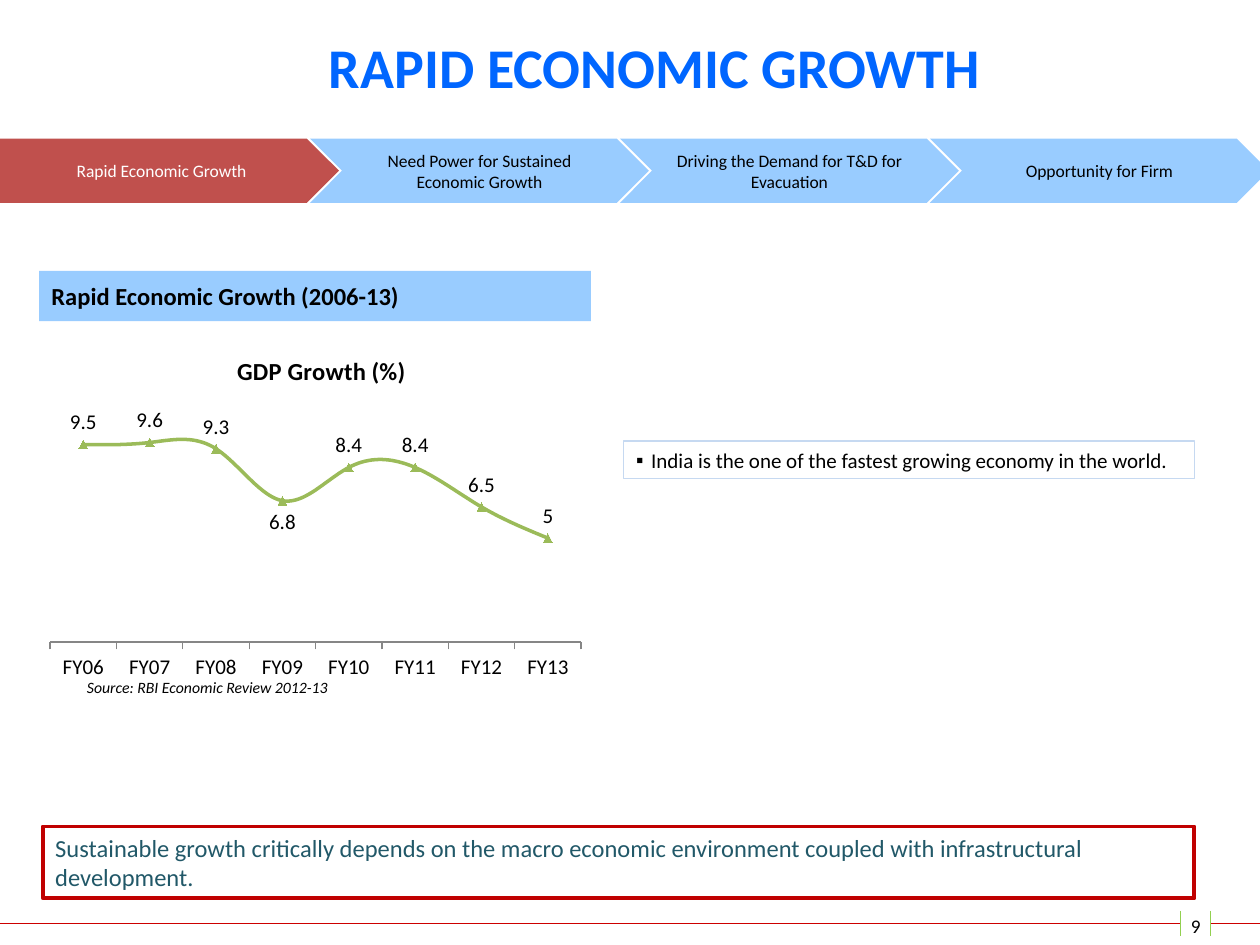
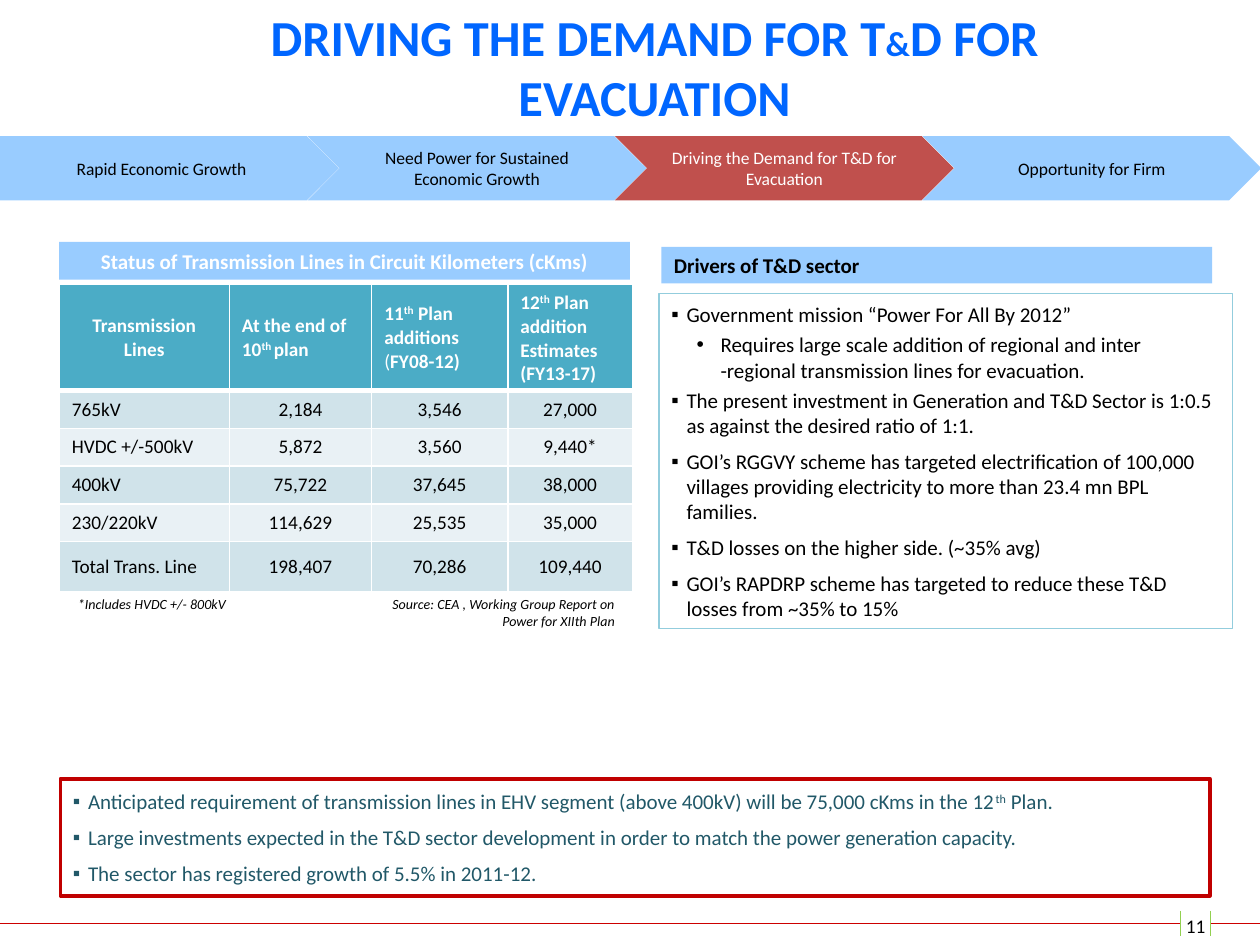
from lxml import etree
from pptx import Presentation
from pptx.chart.data import CategoryChartData
from pptx.dml.color import RGBColor
from pptx.enum.chart import (XL_CHART_TYPE, XL_LABEL_POSITION,
                             XL_MARKER_STYLE, XL_TICK_MARK)
from pptx.enum.shapes import MSO_CONNECTOR, MSO_SHAPE
from pptx.enum.text import MSO_ANCHOR, MSO_AUTO_SIZE, PP_ALIGN
from pptx.oxml.ns import qn
from pptx.util import Inches, Pt

RECT, PLATE, CHEVRON = MSO_SHAPE.RECTANGLE, MSO_SHAPE.PENTAGON, MSO_SHAPE.CHEVRON
LEFT, CENTER, RIGHT = PP_ALIGN.LEFT, PP_ALIGN.CENTER, PP_ALIGN.RIGHT
TOP, MIDDLE = MSO_ANCHOR.TOP, MSO_ANCHOR.MIDDLE
ABOVE, BELOW = XL_LABEL_POSITION.ABOVE, XL_LABEL_POSITION.BELOW

FONT = "Calibri"
BLACK = RGBColor(0, 0, 0)
WHITE = RGBColor(0xFF, 0xFF, 0xFF)
BLUE = RGBColor(0x00, 0x66, 0xFF)
SKY = RGBColor(0x99, 0xCC, 0xFF)
BRICK = RGBColor(0xC0, 0x50, 0x4D)
RED = RGBColor(0xC0, 0x00, 0x00)
RULE = RGBColor(0xCC, 0x00, 0x00)
LIME = RGBColor(0x92, 0xD0, 0x50)
TEAL = RGBColor(0x21, 0x58, 0x68)
PALE = RGBColor(0xC6, 0xD9, 0xF1)
AQUA = RGBColor(0x93, 0xCD, 0xDD)
HEAD = RGBColor(0x4B, 0xAC, 0xC6)
BANDS = (RGBColor(0xD0, 0xE3, 0xEA), RGBColor(0xE9, 0xF1, 0xF5))
GREEN = RGBColor(0x9B, 0xBB, 0x59)
GRAY = RGBColor(0x86, 0x86, 0x86)

SUP, SMALL, THIN = "sup", "small", "thin"
TH = ("th", SUP)

STEPS = ["Rapid Economic Growth",
         "Need Power for Sustained Economic Growth",
         "Driving the Demand for T&D for Evacuation",
         "Opportunity for Firm"]


# ---- Text ----
def style(font, size, color, bold=False, italic=False):
    font.name, font.size, font.bold, font.italic = FONT, Pt(size), bold, italic
    font.color.rgb = color


def write(par, parts):
    """Parts are a string, or a list of strings and (string, look) pairs."""
    for part in [parts] if isinstance(parts, str) else parts:
        text, look = (part, None) if isinstance(part, str) else part
        run = par.add_run()
        run.text = text
        if look == SUP:
            run.font._element.set("baseline", "30000")
        elif look == SMALL:
            run.font.size = Pt(19.8)
        elif look == THIN:
            run.font.bold = False


def bullet(par, char, left, hang):
    props = par._p.get_or_add_pPr()
    props.set("marL", str(Inches(left)))
    props.set("indent", str(-Inches(hang)))
    etree.SubElement(props, qn("a:buFont")).set("typeface", "Arial")
    etree.SubElement(props, qn("a:buChar")).set("char", char)


def fill_text(frame, pars, size, color, align=LEFT, anchor=MIDDLE,
              bold=False, italic=False):
    frame.word_wrap = True
    frame.vertical_anchor = anchor
    for i, parts in enumerate(pars):
        par = frame.add_paragraph() if i else frame.paragraphs[0]
        par.alignment = align
        write(par, parts)
        style(par.font, size, color, bold, italic)


def fill_list(frame, items, size, color):
    """Items are (parts, level, space after)."""
    frame.word_wrap = True
    frame.vertical_anchor = MIDDLE
    for i, (parts, level, after) in enumerate(items):
        par = frame.add_paragraph() if i else frame.paragraphs[0]
        par.alignment = LEFT
        par.space_after = Pt(after)
        if level:
            bullet(par, "•", 0.39, 0.19)
        else:
            bullet(par, "▪", 0.12, 0.12)
        write(par, parts)
        style(par.font, size, color)


# ---- Shapes ----
def box(slide, kind, x, y, w, h, fill=None, line=None, width=0.75):
    shape = slide.shapes.add_shape(kind, Inches(x), Inches(y), Inches(w), Inches(h))
    shape.shadow.inherit = False
    if fill is None:
        shape.fill.background()
    else:
        shape.fill.solid()
        shape.fill.fore_color.rgb = fill
    if line is None:
        shape.line.fill.background()
    else:
        shape.line.color.rgb = line
        shape.line.width = Pt(width)
    return shape


def band(slide, x, y, w, h, text, size, color=BLACK, align=LEFT):
    shape = box(slide, RECT, x, y, w, h, SKY)
    fill_text(shape.text_frame, [text], size, color, align, bold=True)


def note(slide, x, y, w, h, text, size, align=LEFT, right=0.1):
    frame = slide.shapes.add_textbox(Inches(x), Inches(y), Inches(w), Inches(h)).text_frame
    frame.margin_right = Inches(right)
    fill_text(frame, [text], size, BLACK, align, TOP, italic=True)


def rule(slide, x1, y1, x2, y2, color):
    line = slide.shapes.add_connector(MSO_CONNECTOR.STRAIGHT, Inches(x1),
                                      Inches(y1), Inches(x2), Inches(y2))
    line.line.color.rgb = color
    line.line.width = Pt(0.75)
    etree.SubElement(line._element.spPr, qn("a:effectLst"))


# ---- Shared frame: title, steps, footer ----
def add_title(slide, parts, size):
    title = slide.shapes.title
    title.left, title.top = Inches(1.73), Inches(0.03)
    title.width, title.height = Inches(6.83), Inches(0.99)
    frame = title.text_frame
    frame.auto_size = MSO_AUTO_SIZE.NONE
    frame.margin_left = Inches(0.2)
    fill_text(frame, [parts], size, BLUE, CENTER, bold=True)


def add_steps(slide, top, pitch, active):
    for i, text in enumerate(STEPS):
        on = i == active
        step = box(slide, CHEVRON if i else PLATE, i * pitch, top, 2.69, 0.51,
                   BRICK if on else SKY)
        fill_text(step.text_frame, [text], 10, WHITE if on else BLACK, CENTER)


def add_foot(slide, number):
    rule(slide, 0, 7.33, 9.37, 7.33, RULE)
    rule(slide, 9.61, 7.33, 10, 7.33, RULE)
    for x in (9.37, 9.61):
        rule(slide, x, 7.23, x, 7.43, LIME)
    frame = slide.shapes.add_textbox(Inches(9.39), Inches(7.25), Inches(0.2),
                                     Inches(0.19)).text_frame
    frame.margin_left = frame.margin_right = frame.margin_top = frame.margin_bottom = 0
    fill_text(frame, [str(number)], 11, BLACK, CENTER)


def new_slide(deck, title, size, top, pitch, active, number):
    slide = deck.slides.add_slide(deck.slide_layouts[5])
    add_foot(slide, number)
    add_title(slide, title, size)
    add_steps(slide, top, pitch, active)
    return slide


# ---- Chart ----
def place(parent, index, **spots):
    """Fix the layout of a chart part, in shares of the chart."""
    for old in parent.findall(qn("c:layout")):
        parent.remove(old)
    layout = etree.Element(qn("c:layout"))
    manual = etree.SubElement(layout, qn("c:manualLayout"))
    if "w" in spots:
        etree.SubElement(manual, qn("c:layoutTarget")).set("val", "inner")
    for key in ("xMode", "yMode"):
        etree.SubElement(manual, qn("c:" + key)).set("val", "edge")
    for key, share in spots.items():
        etree.SubElement(manual, qn("c:" + key)).set("val", str(share))
    parent.insert(index, layout)


def add_growth(slide):
    name = "GDP Growth (%)"
    data = CategoryChartData()
    data.categories = [f"FY{year:02}" for year in range(6, 14)]
    data.add_series(name, (9.5, 9.6, 9.3, 6.8, 8.4, 8.4, 6.5, 5))
    chart = slide.shapes.add_chart(XL_CHART_TYPE.LINE_MARKERS, Inches(0.31), Inches(2.6),
                                   Inches(4.39), Inches(2.87), data).chart
    style(chart.font, 12, BLACK)
    chart.has_legend = False
    chart.has_title = True
    par = chart.chart_title.text_frame.paragraphs[0]
    write(par, name)
    style(par.font, 14, BLACK, bold=True)
    place(chart.chart_title._element, 1, x=0.35, y=0.06)
    place(chart._chartSpace.chart.plotArea, 0, x=0.02, y=0.18, w=0.96, h=0.69)

    values = chart.value_axis
    values.minimum_scale, values.maximum_scale = 0, 12
    values.has_major_gridlines = False
    values.visible = False
    years = chart.category_axis
    years.major_tick_mark = XL_TICK_MARK.OUTSIDE
    years.format.line.color.rgb = GRAY

    plot = chart.plots[0]
    plot.vary_by_categories = False
    series = plot.series[0]
    series.smooth = True
    series.format.line.color.rgb = GREEN
    series.format.line.width = Pt(2)
    marker = series.marker
    marker.style, marker.size = XL_MARKER_STYLE.TRIANGLE, 5
    marker.format.fill.solid()
    marker.format.fill.fore_color.rgb = GREEN
    marker.format.line.color.rgb = GREEN
    labels = series.data_labels
    labels.show_value = True
    labels.position = ABOVE
    style(labels.font, 12, BLACK)
    series.points[3].data_label.position = BELOW


# ---- Table ----
def edge(cell, top, bottom):
    props = cell._tc.get_or_add_tcPr()
    for i, (side, width) in enumerate(zip("LRTB", (1, 1, top, bottom))):
        line = etree.Element(qn("a:ln" + side), w=str(Pt(width)))
        color = etree.SubElement(etree.SubElement(line, qn("a:solidFill")), qn("a:srgbClr"))
        color.set("val", str(WHITE))
        props.insert(i, line)


def add_lines(slide):
    heads = [["Transmission Lines"],
             ["At the end of", ["10", ("th ", SUP), "plan"]],
             [["11", TH, " Plan additions"], [("(", THIN), "FY08-12)"]],
             [["12", TH, " Plan addition Estimates (FY13-17)"]]]
    body = [["765kV", "2,184", "3,546", "27,000"],
            ["HVDC +/-500kV", "5,872", "3,560", "9,440*"],
            ["400kV", "75,722", "37,645", "38,000"],
            ["230/220kV", "114,629", "25,535", "35,000"],
            ["Total Trans. Line", "198,407", "70,286", "109,440"]]
    table = slide.shapes.add_table(6, 4, Inches(0.47), Inches(2.26),
                                   Inches(4.55), Inches(2.44)).table
    for col, width in zip(table.columns, (1.35, 1.13, 1.08, 0.99)):
        col.width = Inches(width)
    for row, height in zip(table.rows, (0.84, 0.3, 0.3, 0.3, 0.3, 0.4)):
        row.height = Inches(height)
    for r, texts in enumerate([heads] + body):
        for c, text in enumerate(texts):
            cell = table.cell(r, c)
            cell.vertical_anchor = MIDDLE
            cell.fill.solid()
            cell.fill.fore_color.rgb = BANDS[(r - 1) % 2] if r else HEAD
            edge(cell, 3 if r == 1 else 1, 1 if r else 3)
            mid = c > 0 if r else c == 0
            for i, parts in enumerate([text] if r else text):
                frame = cell.text_frame
                par = frame.add_paragraph() if i else frame.paragraphs[0]
                par.alignment = CENTER if mid else LEFT
                write(par, parts)
                style(par.font, 11, BLACK if r else WHITE, bold=r == 0)


# ---- Slides ----
def growth_slide(deck):
    slide = new_slide(deck, "RAPID ECONOMIC GROWTH", 32, 1.1, 2.46, 0, 9)
    band(slide, 0.31, 2.15, 4.38, 0.4, "Rapid Economic Growth (2006-13)", 14)
    add_growth(slide)
    note(slide, 0.45, 5.33, 2.15, 0.25, "Source: RBI Economic Review 2012-13", 9, RIGHT, 0)
    fact = box(slide, RECT, 4.95, 3.5, 4.53, 0.3, line=PALE)
    fill_list(fact.text_frame, [
        ("India is the one of the fastest growing economy in the world.", 0, 0)], 12, BLACK)
    key = box(slide, RECT, 0.34, 6.56, 9.14, 0.57, WHITE, RED, 2.25)
    fill_text(key.text_frame, ["Sustainable growth critically depends on the macro economic "
                               "environment coupled with infrastructural development."],
              14, TEAL, anchor=TOP)


def demand_slide(deck):
    title = ["DRIVING THE DEMAND FOR T", ("&", SMALL), "D FOR EVACUATION"]
    slide = new_slide(deck, title, 28.8, 1.08, 2.44, 2, 11)
    band(slide, 0.47, 1.92, 4.53, 0.3,
         "Status of Transmission Lines in Circuit Kilometers (cKms)", 12, WHITE, CENTER)
    add_lines(slide)
    note(slide, 0.52, 4.68, 2.2, 0.24, "*Includes HVDC +/- 800kV", 8)
    note(slide, 2.78, 4.68, 2.2, 0.37,
         "Source: CEA , Working Group Report on Power for XIIth Plan", 8, RIGHT)
    band(slide, 5.25, 1.96, 4.37, 0.29, "Drivers of T&D sector", 12)
    drivers = box(slide, RECT, 5.23, 2.33, 4.55, 2.66, line=AQUA)
    fill_list(drivers.text_frame, [
        ("Government mission “Power For All By 2012”", 0, 3),
        ("Requires large scale addition of regional and inter -regional "
         "transmission lines for evacuation.", 1, 3),
        ("The present investment in Generation and T&D Sector is 1:0.5 "
         "as against the desired ratio of 1:1.", 0, 6),
        ("GOI’s RGGVY scheme has targeted electrification of 100,000 villages "
         "providing electricity to more than 23.4 mn BPL families.", 0, 6),
        ("T&D losses on the higher side. (~35% avg)", 0, 6),
        ("GOI’s RAPDRP scheme has targeted to reduce these T&D losses "
         "from ~35% to 15%", 0, 6)], 12, BLACK)
    key = box(slide, RECT, 0.48, 6.18, 9.12, 0.93, line=RED, width=2.25)
    fill_list(key.text_frame, [
        (["Anticipated requirement of transmission lines in EHV segment (above 400kV) "
          "will be 75,000 cKms in the 12", TH, " Plan."], 0, 6),
        ("Large investments expected in the T&D sector development in order to match "
         "the power generation capacity.", 0, 6),
        ("The sector has registered growth of 5.5% in 2011-12.", 0, 6)], 12, TEAL)


def main():
    deck = Presentation()
    deck.slide_width, deck.slide_height = Inches(10), Inches(7.5)
    growth_slide(deck)
    demand_slide(deck)
    deck.save("out.pptx")


if __name__ == "__main__":
    main()
